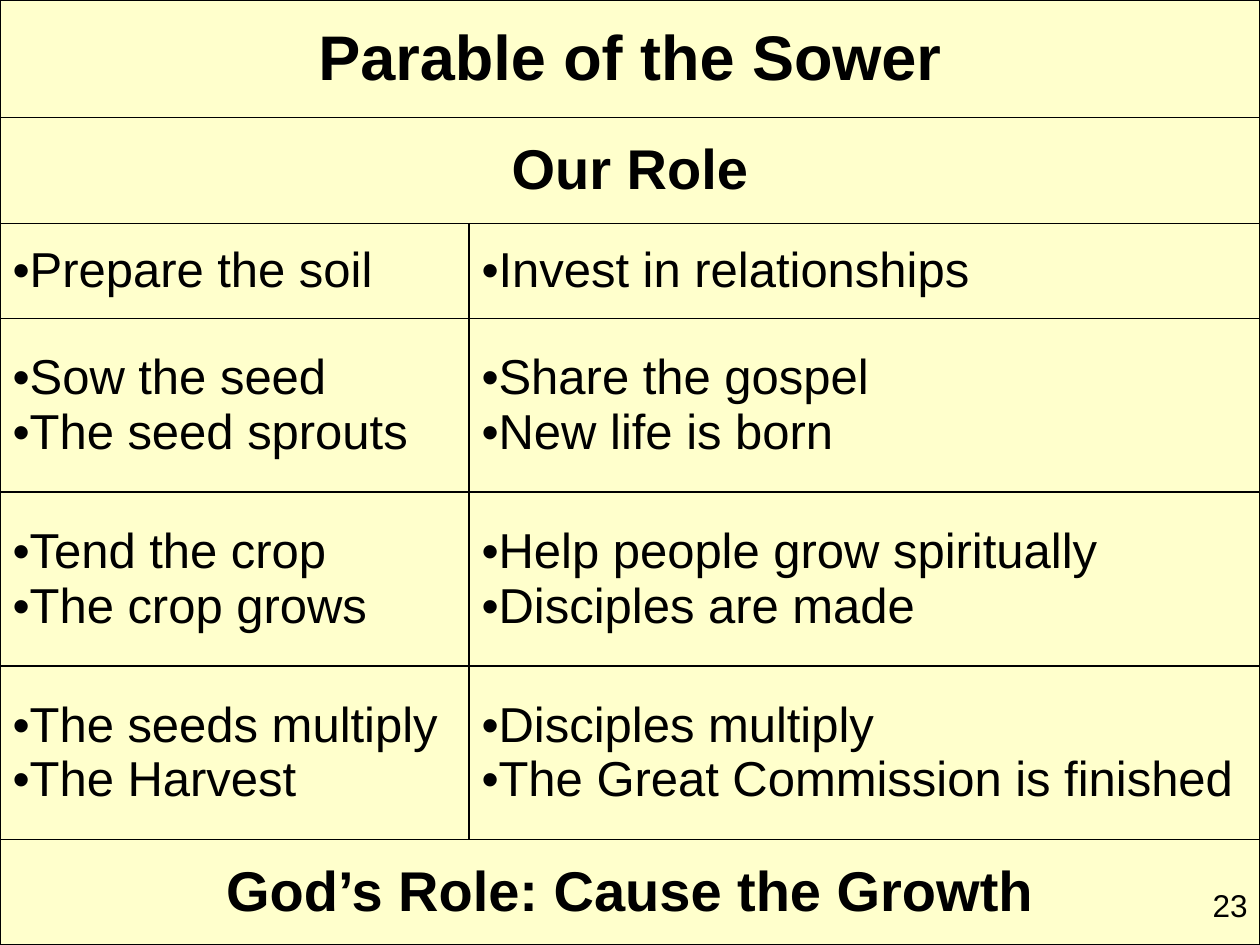
"""Build the Parable of the Sower slide: one full-page table and a page number."""
from dataclasses import dataclass

from lxml.etree import SubElement
from pptx import Presentation
from pptx.dml.color import RGBColor
from pptx.enum.text import MSO_ANCHOR as Anchor, PP_ALIGN as Align
from pptx.oxml.ns import qn
from pptx.util import Pt

WIDTH, HEIGHT = 720, 540
COLUMN_WIDTHS = (268, 452)
FONT = "Arial"
INK, CREAM = "000000", "FFFFCC"
BULLET_INDENT = 8.64


@dataclass(frozen=True)
class Row:
    height: float
    cells: tuple[tuple[str, ...], ...]
    size: int = 28

    @property
    def is_heading(self) -> bool:
        return len(self.cells) == 1


ROWS = (
    Row(67.25, (("Parable of the Sower",),), 36),
    Row(60.5, (("Our Role",),), 32),
    Row(54.25, (("Prepare the soil",), ("Invest in relationships",))),
    Row(99.25, (("Sow the seed", "The seed sprouts"),
                ("Share the gospel", "New life is born"))),
    Row(99.25, (("Tend the crop", "The crop grows"),
                ("Help people grow spiritually", "Disciples are made"))),
    Row(99.25, (("The seeds multiply", "The Harvest"),
                ("Disciples multiply", "The Great Commission is finished"))),
    Row(60.25, (("God’s Role: Cause the Growth",),), 32),
)


def color(value: str) -> RGBColor:
    return RGBColor.from_string(value)


def format_font(font, **values) -> None:
    for name, value in {"name": FONT, **values}.items():
        setattr(font, name, value)
    font.color.rgb = color(INK)


def add_bullet(paragraph) -> None:
    properties = paragraph._p.get_or_add_pPr()
    properties.set("marL", str(Pt(BULLET_INDENT)))
    properties.set("indent", str(-Pt(BULLET_INDENT)))
    SubElement(properties, qn("a:buFont"), typeface=FONT)
    SubElement(properties, qn("a:buChar"), char="•")


def style_cell(cell) -> None:
    properties = cell._tc.get_or_add_tcPr()
    for side in ("lnL", "lnR", "lnT", "lnB"):
        line = SubElement(properties, qn(f"a:{side}"), w=str(Pt(1)))
        SubElement(SubElement(line, qn("a:solidFill")), qn("a:srgbClr"), val=INK)
    cell.fill.solid()
    cell.fill.fore_color.rgb = color(CREAM)
    cell.vertical_anchor = Anchor.MIDDLE


def write_cell(cell, lines: tuple[str, ...], row: Row) -> None:
    cell.text = "\n".join(lines)
    for paragraph in cell.text_frame.paragraphs:
        if row.is_heading:
            paragraph.alignment = Align.CENTER
        else:
            add_bullet(paragraph)
        format_font(paragraph.runs[0].font, size=Pt(row.size), bold=row.is_heading)


def add_roles_table(slide) -> None:
    frame = slide.shapes.add_table(len(ROWS), len(COLUMN_WIDTHS), 0, 0, Pt(WIDTH), Pt(HEIGHT))
    table = frame.table
    for column, width in zip(table.columns, COLUMN_WIDTHS):
        column.width = Pt(width)
    for index, row in enumerate(ROWS):
        table.rows[index].height = Pt(row.height)
        cells = [table.cell(index, column) for column in range(len(COLUMN_WIDTHS))]
        for cell in cells:
            style_cell(cell)
        if row.is_heading:
            cells[0].merge(cells[-1])
        for cell, lines in zip(cells, row.cells):
            write_cell(cell, lines, row)


def add_page_number(slide, number: str) -> None:
    shape = slide.shapes.add_textbox(Pt(552), Pt(502.5), Pt(168), Pt(37.5))
    shape.text_frame.word_wrap = True
    paragraph = shape.text_frame.paragraphs[0]
    paragraph.text = number
    paragraph.alignment = Align.RIGHT
    format_font(paragraph.runs[0].font, size=Pt(18))


def main() -> None:
    presentation = Presentation()
    presentation.slide_width, presentation.slide_height = Pt(WIDTH), Pt(HEIGHT)
    slide = presentation.slides.add_slide(presentation.slide_layouts[6])
    add_roles_table(slide)
    add_page_number(slide, "23")
    presentation.save("out.pptx")


if __name__ == "__main__":
    main()
